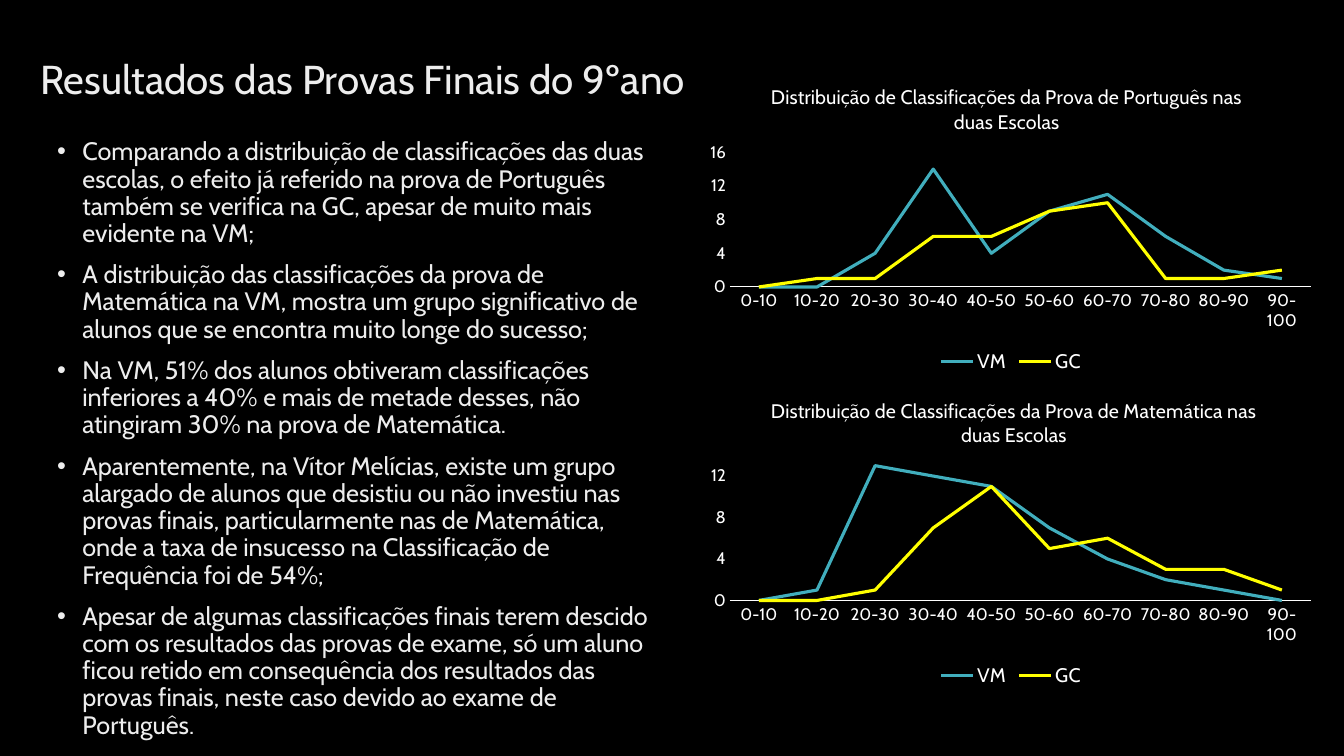
from lxml import etree
from pptx import Presentation
from pptx.chart.data import CategoryChartData
from pptx.dml.color import RGBColor
from pptx.enum.chart import XL_CHART_TYPE as ChartType, XL_LEGEND_POSITION as LegendPos, XL_TICK_MARK as Tick
from pptx.enum.text import MSO_ANCHOR as Anchor
from pptx.oxml.ns import qn
from pptx.util import Pt

TITLE = "Resultados das Provas Finais do 9ºano"
BULLETS = [
    "Comparando a distribuição de classificações das duas escolas, o efeito já referido na prova de Português também se verifica na GC, apesar de muito mais evidente na VM;",
    "A distribuição das classificações da prova de Matemática na VM, mostra um grupo significativo de alunos que se encontra muito longe do sucesso;",
    "Na VM, 51% dos alunos obtiveram classificações inferiores a 40% e mais de metade desses, não atingiram 30% na prova de Matemática.",
    "Aparentemente, na Vítor Melícias, existe um grupo alargado de alunos que desistiu ou não investiu nas provas finais, particularmente nas de Matemática, onde a taxa de insucesso na Classificação de Frequência foi de 54%;",
    "Apesar de algumas classificações finais terem descido com os resultados das provas de exame, só um aluno ficou retido em consequência dos resultados das provas finais, neste caso devido ao exame de Português.",
]
GRADES = [f"{n}-{n + 10}" for n in range(0, 100, 10)]
EXAMS = [
    {"subject": "Português", "top": 16,
     "VM": [0, 0, 4, 14, 4, 9, 11, 6, 2, 1],
     "GC": [0, 1, 1, 6, 6, 9, 10, 1, 1, 2]},
    {"subject": "Matemática", "top": 13,
     "VM": [0, 1, 13, 12, 11, 7, 4, 2, 1, 0],
     "GC": [0, 0, 1, 7, 11, 5, 6, 3, 3, 1]},
]
THEME = {
    "font": "Cabin", "back": "000000", "text": "EDEDED", "chart": "FFFFFF",
    "VM": "41AEBD", "GC": "FFFF00",
    "title": 28.8, "body": 18, "heading": 14, "legend": 14, "axis": 12,
}
TITLE_BOX = (21.6, 22.3, 497.5, 71.3)
BODY_BOX = (33.8, 95.8, 446.4, 421.9)
CHART_LEFT, CHART_TOP, CHART_W, CHART_H = 499, 46.1, 446.4, 223.9
INDENT = 18
HEADING_PLACE = {"x": 0.11, "y": 0.05}
PLOT_PLACE = {"x": 0.05, "y": 0.28, "w": 0.93, "h": 0.43}


def color(name):
    return RGBColor.from_string(THEME[name])


def style(font, size, tint):
    font.name = THEME["font"]
    font.size = Pt(THEME[size])
    font.bold = False
    font.color.rgb = color(tint)


def add_text(slide, box, paragraphs, size, anchor, bulleted=False):
    tf = slide.shapes.add_textbox(*map(Pt, box)).text_frame
    tf.word_wrap = True
    tf.vertical_anchor = anchor
    for i, text in enumerate(paragraphs):
        p = tf.paragraphs[0] if i == 0 else tf.add_paragraph()
        p.text = text
        p.line_spacing = 0.9
        p.space_before = Pt(10 if i else 0)
        if bulleted:
            pPr = p._p.get_or_add_pPr()
            pPr.set("marL", str(Pt(INDENT)))
            pPr.set("indent", str(-Pt(INDENT)))
            etree.SubElement(pPr, qn("a:buFont")).set("typeface", "Arial")
            etree.SubElement(pPr, qn("a:buChar")).set("char", "•")
        style(p.runs[0].font, size, "text")


def place(parent, after, fractions, inner=False):
    for old in parent.findall(qn("c:layout")):
        parent.remove(old)
    layout = etree.Element(qn("c:layout"))
    manual = etree.SubElement(layout, qn("c:manualLayout"))
    if inner:
        etree.SubElement(manual, qn("c:layoutTarget")).set("val", "inner")
    for axis in "xy":
        etree.SubElement(manual, qn(f"c:{axis}Mode")).set("val", "edge")
    for key, value in fractions.items():
        etree.SubElement(manual, qn(f"c:{key}")).set("val", str(value))
    if after is None:
        parent.insert(0, layout)
    else:
        after.addnext(layout)


def add_exam_chart(slide, exam, top):
    data = CategoryChartData()
    data.categories = GRADES
    for school in ("VM", "GC"):
        data.add_series(school, exam[school])
    frame = slide.shapes.add_chart(
        ChartType.LINE, Pt(CHART_LEFT), Pt(top), Pt(CHART_W), Pt(CHART_H), data)
    chart = frame.chart
    style(chart.font, "axis", "chart")

    heading = chart.chart_title
    heading.text_frame.text = f"Distribuição de Classificações da Prova de {exam['subject']} nas duas Escolas"
    style(heading.text_frame.paragraphs[0].runs[0].font, "heading", "chart")
    heading.include_in_layout = False
    title = heading._element
    place(title, title.find(qn("c:tx")), HEADING_PLACE)
    place(chart._chartSpace.chart.plotArea, None, PLOT_PLACE, inner=True)

    chart.has_legend = True
    chart.legend.position = LegendPos.BOTTOM
    chart.legend.include_in_layout = False
    style(chart.legend.font, "legend", "chart")

    for axis in (chart.category_axis, chart.value_axis):
        axis.major_tick_mark = axis.minor_tick_mark = Tick.NONE
        axis.has_major_gridlines = False
        style(axis.tick_labels.font, "axis", "chart")
    line = chart.category_axis.format.line
    line.color.rgb = color("chart")
    line.width = Pt(0.75)
    values = chart.value_axis
    values.format.line.fill.background()
    values.minimum_scale, values.maximum_scale, values.major_unit = 0, exam["top"], 4

    plot = chart.plots[0]
    plot.vary_by_categories = False
    for series in plot.series:
        series.smooth = False
        series.format.line.color.rgb = color(series.name)
        series.format.line.width = Pt(2.25)


def main():
    prs = Presentation()
    prs.slide_width, prs.slide_height = Pt(960), Pt(540)
    s = prs.slides.add_slide(prs.slide_layouts[6])
    s.background.fill.solid()
    s.background.fill.fore_color.rgb = color("back")
    add_text(s, TITLE_BOX, [TITLE], "title", Anchor.MIDDLE)
    add_text(s, BODY_BOX, BULLETS, "body", Anchor.TOP, bulleted=True)
    for i, exam in enumerate(EXAMS):
        add_exam_chart(s, exam, CHART_TOP + i * CHART_H)
    prs.save("out.pptx")


if __name__ == "__main__":
    main()
